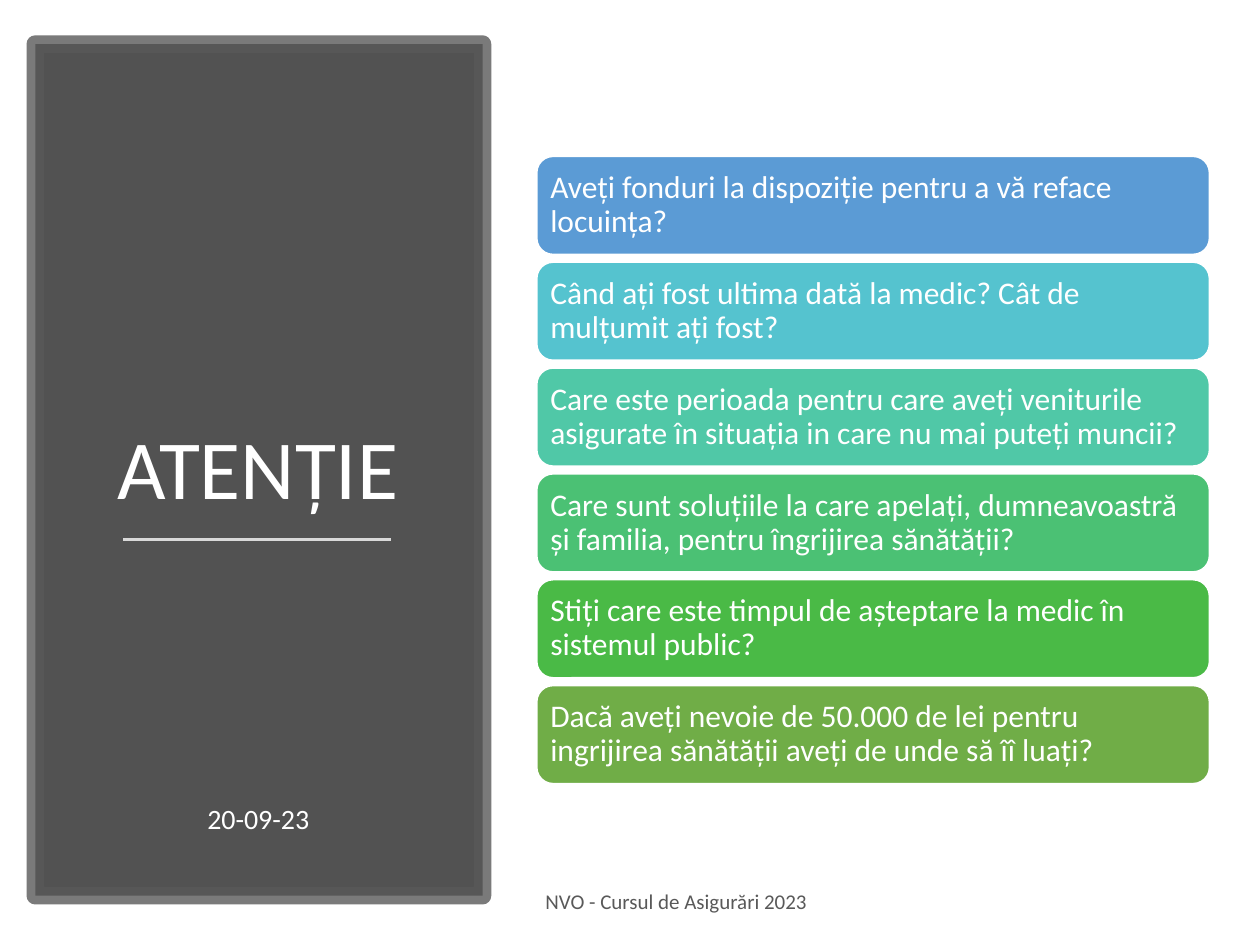
"""Build the ATENȚIE slide: a dark title panel beside six question cards."""
from dataclasses import dataclass

from lxml.etree import SubElement
from pptx import Presentation
from pptx.dml.color import RGBColor
from pptx.enum.shapes import MSO_CONNECTOR, MSO_SHAPE
from pptx.enum.text import MSO_ANCHOR, MSO_AUTO_SIZE, PP_ALIGN
from pptx.oxml.ns import qn
from pptx.util import Inches, Pt

WHITE = RGBColor(0xFF, 0xFF, 0xFF)
DARK = RGBColor(0x40, 0x40, 0x40)
GREY = RGBColor(0x59, 0x59, 0x59)
LIGHT = RGBColor(0xD9, 0xD9, 0xD9)
BLUE = RGBColor(0x5B, 0x9B, 0xD5)
CYAN = RGBColor(0x55, 0xC3, 0xCF)
TEAL = RGBColor(0x50, 0xC8, 0xA7)
MINT = RGBColor(0x4B, 0xC1, 0x74)
GREEN = RGBColor(0x4A, 0xBA, 0x46)
OLIVE = RGBColor(0x70, 0xAD, 0x47)

FONT = "Calibri"
COLS, ROWS = 100, 75
WIDTH, HEIGHT = Inches(10), Inches(7.5)
CARD_LEFT, CARD_TOP, CARD_WIDTH, CARD_HEIGHT = 42.6, 12.4, 53.4, 7.8
CARD_STEP = 8.4


@dataclass(frozen=True)
class Box:
    """Hold a position and size in grid columns and rows."""
    col: float
    row: float
    cols: float
    rows: float

    def emu(self) -> tuple[int, int, int, int]:
        """Return left, top, width and height in EMU."""
        return (x(self.col), y(self.row), x(self.cols), y(self.rows))


@dataclass(frozen=True)
class Card:
    """Hold the question and colour of one card."""
    text: str
    color: RGBColor


CARDS = (
    Card("Aveți fonduri la dispoziție pentru a vă reface locuința?", BLUE),
    Card("Când ați fost ultima dată la medic? Cât de mulțumit ați fost?", CYAN),
    Card("Care este perioada pentru care aveți veniturile asigurate "
         "în situația in care nu mai puteți muncii?", TEAL),
    Card("Care sunt soluțiile la care apelați, dumneavoastră și familia, "
         "pentru îngrijirea sănătății?", MINT),
    Card("Stiți care este timpul de așteptare la medic în sistemul public?", GREEN),
    Card("Dacă aveți nevoie de 50.000 de lei pentru ingrijirea sănătății "
         "aveți de unde să îî luați?", OLIVE),
)


def x(cols: float) -> int:
    """Convert grid columns to EMU."""
    return round(WIDTH * cols / COLS)


def y(rows: float) -> int:
    """Convert grid rows to EMU."""
    return round(HEIGHT * rows / ROWS)


def write(sp, text: str, *, size: float, color: RGBColor = WHITE,
          align=PP_ALIGN.LEFT, anchor=MSO_ANCHOR.MIDDLE,
          spacing: float = 0.9, inset: float | None = None) -> None:
    """Put one formatted paragraph into a shape."""
    tf = sp.text_frame
    tf.word_wrap = True
    tf.auto_size = MSO_AUTO_SIZE.NONE
    tf.vertical_anchor = anchor
    if inset is not None:
        tf.margin_left = tf.margin_right = x(inset)
        tf.margin_top = tf.margin_bottom = y(inset)
    p = tf.paragraphs[0]
    p.alignment, p.line_spacing = align, spacing
    p.space_before = Pt(0)
    r = p.add_run()
    r.text = text
    r.font.name, r.font.size = FONT, Pt(size)
    r.font.color.rgb = color


def set_alpha(fill_parent, percent: int) -> None:
    """Set the opacity of the solid fill under an element."""
    color = fill_parent.find(qn("a:solidFill"))[0]
    SubElement(color, qn("a:alpha")).set("val", str(percent * 1000))


def add_block(s, kind, box: Box, fill: RGBColor, line: RGBColor, width: float):
    """Add a filled and outlined preset shape."""
    sp = s.shapes.add_shape(kind, *box.emu())
    sp.shadow.inherit = False
    sp.fill.solid()
    sp.fill.fore_color.rgb = fill
    sp.line.color.rgb = line
    sp.line.width = Pt(width)
    return sp


def add_panel(s) -> None:
    """Add the translucent panel behind the title."""
    sp = add_block(s, MSO_SHAPE.RECTANGLE, Box(2.8, 3.5, 35.5, 67.6), DARK, GREY, 10)
    set_alpha(sp._element.spPr, 90)
    set_alpha(sp.line._get_or_add_ln(), 80)
    s.shapes.title._element.addprevious(sp._element)


def add_title(s, text: str) -> None:
    """Place and format the title placeholder."""
    sp = s.shapes.title
    sp.left, sp.top, sp.width, sp.height = Box(1.7, 10, 37.5, 31.6).emu()
    write(sp, text, size=48, align=PP_ALIGN.CENTER, anchor=MSO_ANCHOR.BOTTOM)


def add_rule(s) -> None:
    """Add the thin line under the title."""
    rule = s.shapes.add_connector(MSO_CONNECTOR.STRAIGHT, x(9.8), y(42.8), x(31), y(42.8))
    rule.line.color.rgb = LIGHT
    rule.line.width = Pt(1.75)
    SubElement(rule._element.spPr, qn("a:effectLst"))


def add_card(s, card: Card, index: int) -> None:
    """Add one question card at its place in the stack."""
    box = Box(CARD_LEFT, CARD_TOP + index * CARD_STEP, CARD_WIDTH, CARD_HEIGHT)
    sp = add_block(s, MSO_SHAPE.ROUNDED_RECTANGLE, box, card.color, WHITE, 1)
    write(sp, card.text, size=18, inset=0.7)


def main() -> None:
    """Build and save the slide."""
    prs = Presentation()
    prs.slide_width, prs.slide_height = WIDTH, HEIGHT
    s = prs.slides.add_slide(prs.slide_layouts[5])
    add_panel(s)
    add_title(s, "ATENȚIE")
    add_rule(s)
    date = s.shapes.add_textbox(*Box(5.5, 63.3, 30, 3.6).emu())
    write(date, "20-09-23", size=16, align=PP_ALIGN.CENTER)
    footer = s.shapes.add_textbox(*Box(42.3, 69.5, 37.9, 4).emu())
    write(footer, "NVO - Cursul de Asigurări 2023", size=12, color=GREY, spacing=1.0)
    for i, card in enumerate(CARDS):
        add_card(s, card, i)
    prs.save("out.pptx")


if __name__ == "__main__":
    main()
